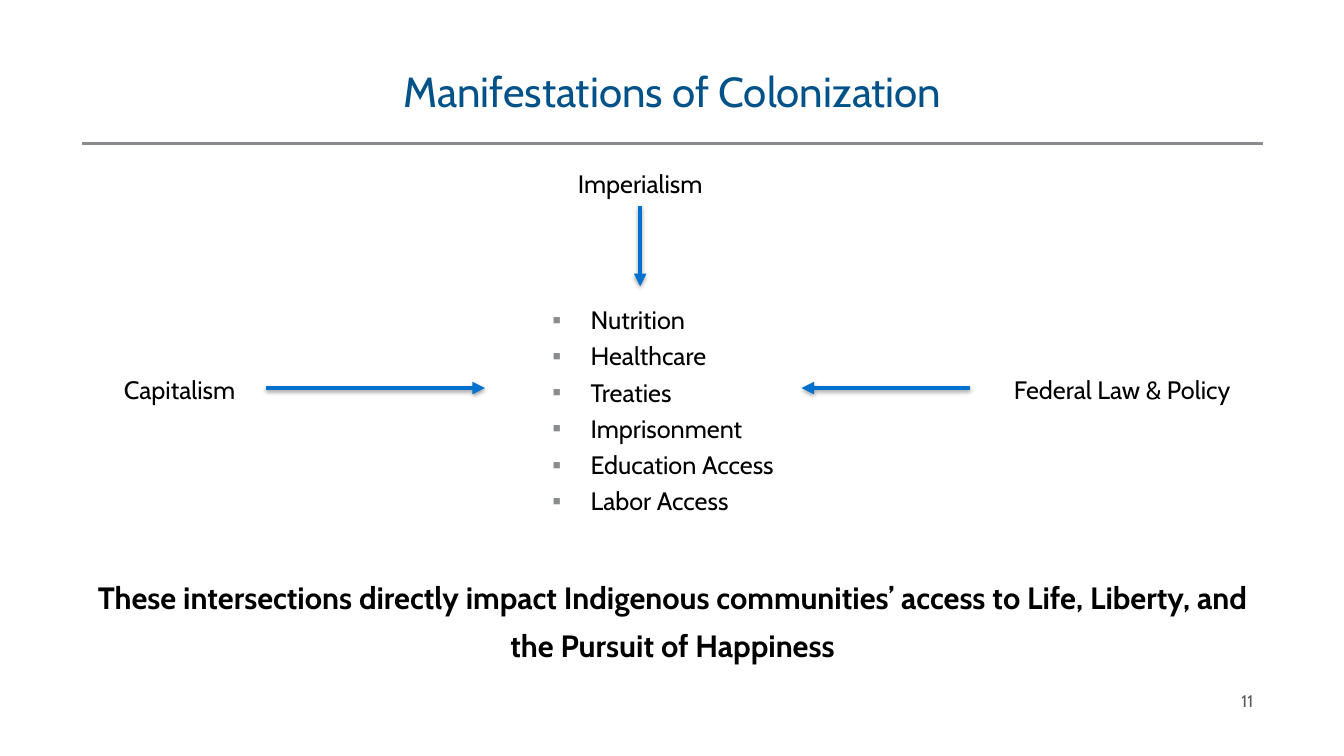
from lxml import etree
from pptx import Presentation
from pptx.dml.color import RGBColor
from pptx.enum.shapes import MSO_CONNECTOR
from pptx.enum.text import MSO_ANCHOR as ANCHOR, PP_ALIGN as ALIGN
from pptx.oxml import parse_xml
from pptx.oxml.ns import nsdecls, qn
from pptx.util import Pt

PX = 9144  # EMU per px, 100 px to the inch
FONT = "Cabin"
COLORS = {
    "title": "005288",
    "text": "000000",
    "rule": "8A8B8F",
    "arrow": "0072CE",
    "number": "5A5B5D",
}
IMPACTS = ["Nutrition", "Healthcare", "Treaties", "Imprisonment",
           "Education Access", "Labor Access"]


def px(*values):
    return [v * PX for v in values]


def rgb(name):
    return RGBColor.from_string(COLORS[name])


def add_bullet(p):
    pPr = p._p.get_or_add_pPr()
    pPr.set("marL", str(38 * PX))
    pPr.set("indent", str(-38 * PX))
    color = etree.SubElement(pPr, qn("a:buClr"))
    etree.SubElement(color, qn("a:srgbClr"), val=COLORS["rule"])
    etree.SubElement(pPr, qn("a:buFont"), typeface="Arial")
    etree.SubElement(pPr, qn("a:buChar"), char="▪")


def add_text(slide, box, lines, size=18, color="text", align=ALIGN.LEFT,
             anchor=ANCHOR.TOP, spacing=1.2, bold=False, bullets=False):
    tf = slide.shapes.add_textbox(*px(*box)).text_frame
    tf.word_wrap = True
    tf.vertical_anchor = anchor
    for i, line in enumerate(lines):
        p = tf.add_paragraph() if i else tf.paragraphs[0]
        if bullets:
            add_bullet(p)
        p.alignment = align
        p.line_spacing = spacing
        r = p.add_run()
        r.text = line
        r.font.name = FONT
        r.font.size = Pt(size)
        r.font.bold = bold
        r.font.color.rgb = rgb(color)


def add_line(slide, start, end, color, width):
    line = slide.shapes.add_connector(MSO_CONNECTOR.STRAIGHT, *px(*start, *end))
    line.line.color.rgb = rgb(color)
    line.line.width = Pt(width)
    effects = etree.SubElement(line._element.spPr, qn("a:effectLst"))
    return line, effects


def add_arrow(slide, start, end):
    arrow, effects = add_line(slide, start, end, "arrow", 3)
    etree.SubElement(arrow.line._get_or_add_ln(), qn("a:tailEnd"), type="triangle")
    effects.append(parse_xml(
        f'<a:outerShdw {nsdecls("a")} blurRad="40000" dist="20000" dir="5400000" '
        'rotWithShape="0"><a:srgbClr val="000000"><a:alpha val="37000"/>'
        '</a:srgbClr></a:outerShdw>'))


def main():
    prs = Presentation()
    prs.slide_width, prs.slide_height = px(1333, 750)
    s = prs.slides.add_slide(prs.slide_layouts[6])

    # Title and rule
    add_line(s, (81, 142), (1253, 142), "rule", 2)
    add_text(s, (81, 49, 1172, 81), ["Manifestations of Colonization"], size=30,
             color="title", align=ALIGN.CENTER, anchor=ANCHOR.MIDDLE, spacing=1.0)

    # Conclusion
    add_text(s, (81, 582, 1172, 81),
             ["These intersections directly impact Indigenous communities’ "
              "access to Life, Liberty, and the Pursuit of Happiness"],
             size=22, align=ALIGN.CENTER, anchor=ANCHOR.BOTTOM, spacing=1.3, bold=True)

    # Affected areas
    add_text(s, (538, 291, 256, 231), IMPACTS, bullets=True)

    # Slide number
    add_text(s, (1153, 675, 100, 40), ["11"], size=12, color="number",
             align=ALIGN.RIGHT, anchor=ANCHOR.MIDDLE, spacing=1.0)

    # Forces, each with an arrow to the centre
    forces = [
        ("Federal Law & Policy", (973, 360), ALIGN.CENTER, (962, 385), (795, 385)),
        ("Capitalism", (113, 360), ALIGN.LEFT, (264, 385), (481, 385)),
        ("Imperialism", (495, 156), ALIGN.CENTER, (635, 204), (635, 284)),
    ]
    for name, corner, align, start, end in forces:
        add_text(s, (*corner, 280, 72), [name], align=align)
        add_arrow(s, start, end)

    prs.save("out.pptx")


if __name__ == "__main__":
    main()
